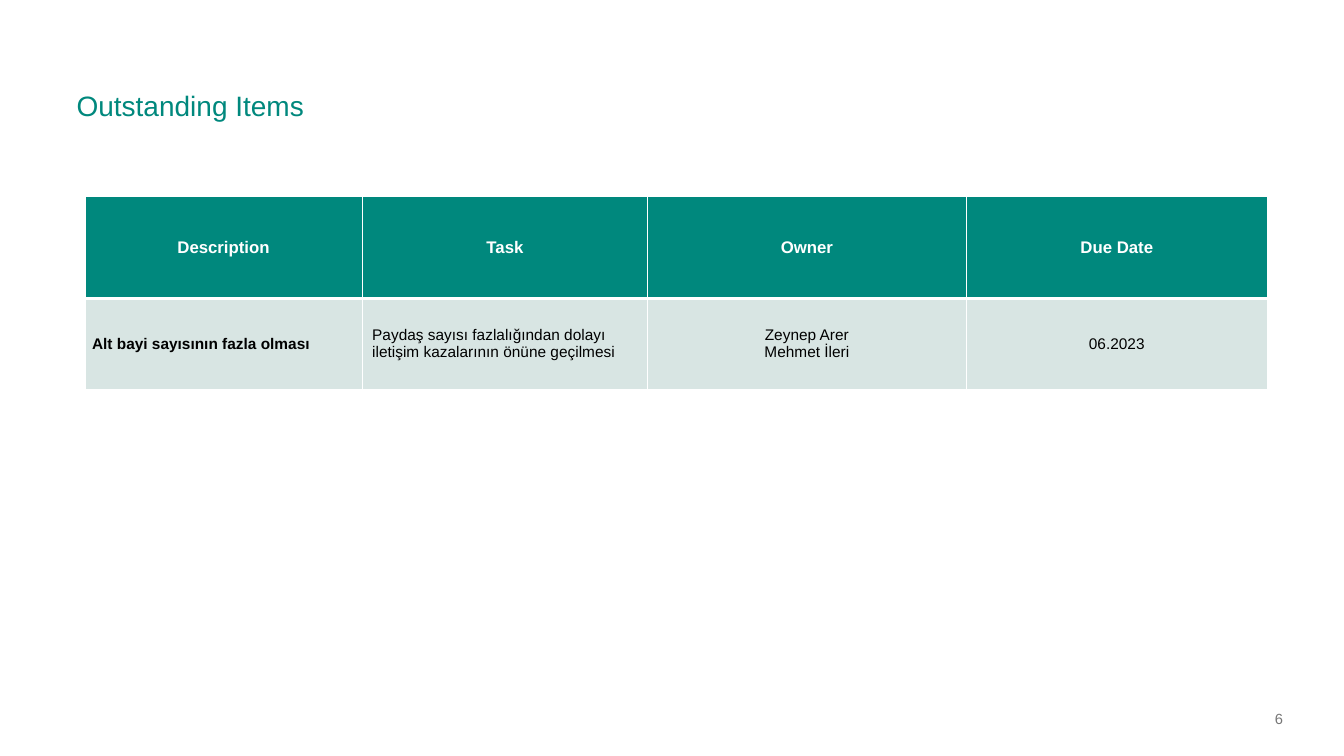
import copy
from dataclasses import dataclass

import pptx
import pptx.dml.color
import pptx.enum.text
import pptx.oxml
import pptx.oxml.ns
import pptx.slide
import pptx.table
import pptx.text.text
import pptx.util
from pptx.dml.color import RGBColor
from pptx.util import Cm

TEAL = RGBColor(0x00, 0x88, 0x7D)
PALE_TEAL = RGBColor(0xD8, 0xE5, 0xE3)
WHITE = RGBColor(0xFF, 0xFF, 0xFF)
BLACK = RGBColor(0x00, 0x00, 0x00)
GREY = RGBColor(0x77, 0x77, 0x77)

LEFT = pptx.enum.text.PP_ALIGN.LEFT
CENTER = pptx.enum.text.PP_ALIGN.CENTER
MIDDLE = pptx.enum.text.MSO_ANCHOR.MIDDLE
BOTTOM = pptx.enum.text.MSO_ANCHOR.BOTTOM


@dataclass(frozen=True)
class Column:
    heading: str
    entry: str
    width: float
    align: pptx.enum.text.PP_ALIGN = CENTER
    bold: bool = False
    tight: bool = False


@dataclass(frozen=True)
class Label:
    text: str
    left: float
    top: float
    width: float
    height: float
    size: float
    color: RGBColor
    anchor: pptx.enum.text.MSO_ANCHOR
    spacing: float = 1.0
    padding: float = 0


COLUMNS = [
    Column("Description", "Alt bayi sayısının fazla olması", 6.99, LEFT, bold=True, tight=True),
    Column("Task", "Paydaş sayısı fazlalığından dolayı iletişim kazalarının önüne geçilmesi", 7.19, LEFT),
    Column("Owner", "Zeynep Arer\nMehmet İleri", 8.03),
    Column("Due Date", "06.2023", 7.59),
]
ROW_HEIGHTS = [2.57, 2.29]

LABELS = [
    Label("Outstanding Items", 1.93, 1.96, 30.2, 1.12, 20, TEAL, BOTTOM, spacing=0.9),
    Label("6", 32.13, 17.6, 1.63, 1.02, 10.5, GREY, MIDDLE, padding=0.13),
]


def write_text(frame: pptx.text.text.TextFrame, text: str, *, size: float, color: RGBColor,
               bold: bool = False, align: pptx.enum.text.PP_ALIGN = LEFT,
               spacing: float = 1.0) -> None:
    frame.word_wrap = True
    paragraph = frame.paragraphs[0]
    paragraph.text = text
    paragraph.alignment = align
    paragraph.line_spacing = spacing
    for run in paragraph.runs:
        run.font.name = "Arial"
        run.font.size = pptx.util.Pt(size)
        run.font.bold = bold
        run.font.color.rgb = color
    for line_break in paragraph._p.findall(pptx.oxml.ns.qn("a:br")):
        line_break.append(copy.deepcopy(paragraph.runs[0]._r.rPr))


def add_label(slide: pptx.slide.Slide, label: Label) -> None:
    box = slide.shapes.add_textbox(Cm(label.left), Cm(label.top), Cm(label.width), Cm(label.height))
    frame = box.text_frame
    frame.margin_left = frame.margin_right = 0
    frame.margin_top = frame.margin_bottom = Cm(label.padding)
    frame.vertical_anchor = label.anchor
    write_text(frame, label.text, size=label.size, color=label.color, spacing=label.spacing)


def style_cell(cell: pptx.table._Cell, *, fill: RGBColor, tight: bool,
               top: float = 1, bottom: float = 1) -> None:
    cell.vertical_anchor = MIDDLE
    cell.margin_left = cell.margin_right = Cm(0.18 if tight else 0.25)
    cell.margin_top = cell.margin_bottom = Cm(0 if tight else 0.13)
    properties = cell._tc.get_or_add_tcPr()
    for side, points in {"L": 1, "R": 1, "T": top, "B": bottom}.items():
        properties.append(pptx.oxml.parse_xml(
            f'<a:ln{side} {pptx.oxml.ns.nsdecls("a")} w="{pptx.util.Pt(points)}">'
            f'<a:solidFill><a:srgbClr val="{WHITE}"/></a:solidFill></a:ln{side}>'))
    cell.fill.solid()
    cell.fill.fore_color.rgb = fill


def add_items_table(slide: pptx.slide.Slide) -> None:
    width = sum(column.width for column in COLUMNS)
    items = slide.shapes.add_table(len(ROW_HEIGHTS), len(COLUMNS), Cm(2.14), Cm(4.95),
                                   Cm(width), Cm(sum(ROW_HEIGHTS))).table
    items.horz_banding = False
    for row, height in zip(items.rows, ROW_HEIGHTS):
        row.height = Cm(height)
    for index, column in enumerate(COLUMNS):
        items.columns[index].width = Cm(column.width)
        heading, entry = items.cell(0, index), items.cell(1, index)
        style_cell(heading, fill=TEAL, tight=True, bottom=3)
        write_text(heading.text_frame, column.heading, size=12, color=WHITE, bold=True,
                   align=CENTER, spacing=1.07)
        style_cell(entry, fill=PALE_TEAL, tight=column.tight, top=3)
        write_text(entry.text_frame, column.entry, size=11, color=BLACK, bold=column.bold,
                   align=column.align, spacing=1.07 if column.tight else 1.0)


def main() -> None:
    deck = pptx.Presentation()
    deck.slide_width, deck.slide_height = Cm(33.87), Cm(19.05)
    slide = deck.slides.add_slide(deck.slide_layouts[6])
    add_items_table(slide)
    for label in LABELS:
        add_label(slide, label)
    deck.save("out.pptx")


if __name__ == "__main__":
    main()
